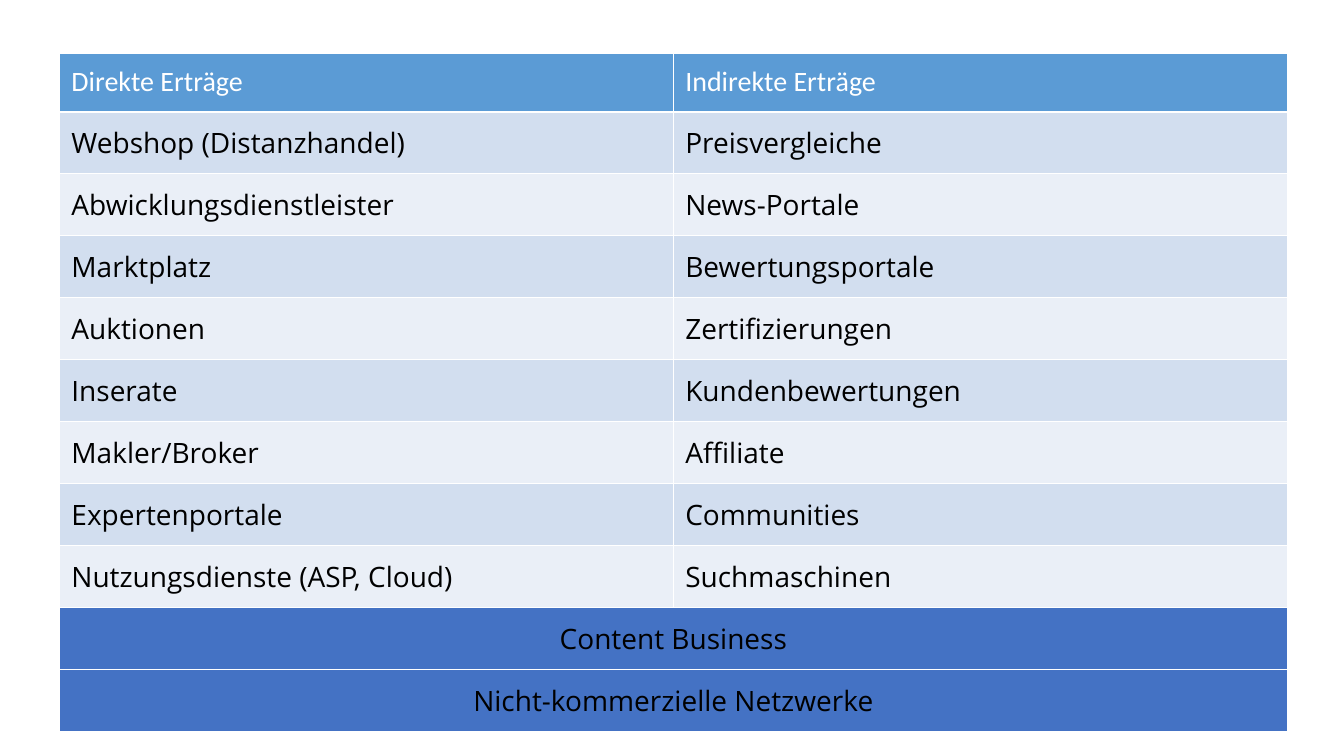
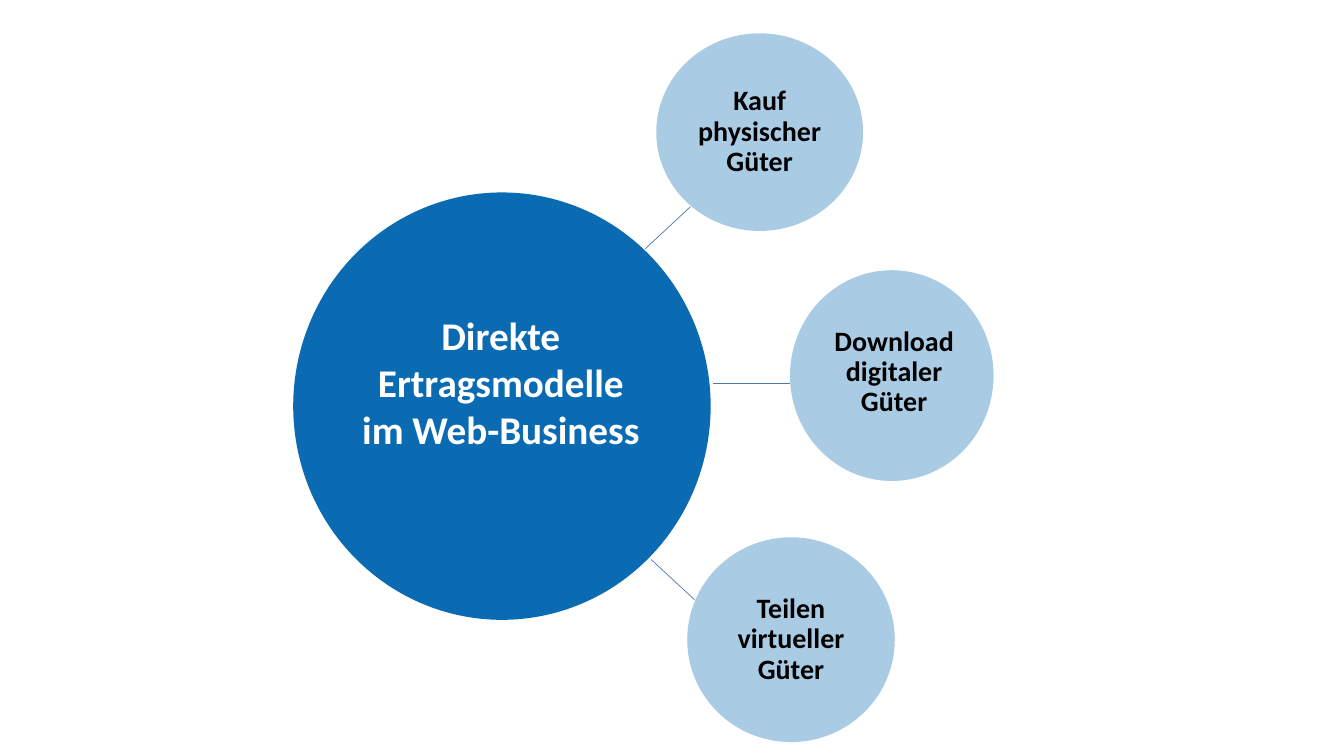
from dataclasses import dataclass

from lxml.etree import SubElement
from pptx import Presentation
from pptx.dml.color import RGBColor
from pptx.enum.shapes import MSO_CONNECTOR, MSO_SHAPE
from pptx.enum.text import MSO_ANCHOR, PP_ALIGN
from pptx.oxml.ns import qn
from pptx.shapes.autoshape import Shape
from pptx.slide import Slide
from pptx.table import _Cell
from pptx.text.text import TextFrame
from pptx.util import Cm, Pt


@dataclass(frozen=True)
class Theme:
    white: str = "FFFFFF"
    black: str = "000000"
    header: str = "5B9BD5"
    bands: tuple[str, str] = ("D2DEEF", "EAEFF7")
    summary: str = "4472C4"
    circle: str = "0A6BB2"
    spoke: str = "497CAB"
    satellite_opacity: int = 35
    heading_font: str = "Calibri"
    body_font: str = "Open Sans"
    body_size: int = 20
    hub_size: int = 28
    border_width: int = 1
    spoke_width: float = 0.5
    tight: float = 0.9


@dataclass(frozen=True)
class Style:
    font: str
    size: int
    color: str
    bold: bool = False
    align: PP_ALIGN = PP_ALIGN.LEFT
    spacing: float = 1.0


@dataclass(frozen=True)
class Box:
    left: float
    top: float
    width: float
    height: float

    def lengths(self) -> tuple[Cm, Cm, Cm, Cm]:
        return Cm(self.left), Cm(self.top), Cm(self.width), Cm(self.height)


@dataclass(frozen=True)
class Satellite:
    label: str
    box: Box
    left_inset: float = 0.03
    bottom_inset: float = 0.03


@dataclass(frozen=True)
class Spoke:
    start: tuple[float, float]
    end: tuple[float, float]


THEME = Theme()
HEADER = Style(THEME.heading_font, THEME.body_size, THEME.white, spacing=THEME.tight)
BODY = Style(THEME.body_font, THEME.body_size, THEME.black)
SUMMARY = Style(THEME.body_font, THEME.body_size, THEME.black, align=PP_ALIGN.CENTER)
HUB = Style(THEME.heading_font, THEME.hub_size, THEME.white, True, PP_ALIGN.CENTER)
LABEL = Style(THEME.heading_font, THEME.body_size, THEME.black, True,
              PP_ALIGN.CENTER, THEME.tight)

HEADINGS = ("Direkte Erträge", "Indirekte Erträge")
REVENUES = (
    ("Webshop (Distanzhandel)", "Preisvergleiche"),
    ("Abwicklungsdienstleister", "News-Portale"),
    ("Marktplatz", "Bewertungsportale"),
    ("Auktionen", "Zertifizierungen"),
    ("Inserate", "Kundenbewertungen"),
    ("Makler/Broker", "Affiliate"),
    ("Expertenportale", "Communities"),
    ("Nutzungsdienste (ASP, Cloud)", "Suchmaschinen"),
)
SHARED = ("Content Business", "Nicht-kommerzielle Netzwerke")
HEADER_HEIGHT, ROW_HEIGHT, COLUMN_WIDTH = 1.47, 1.56, 15.47
CELL_INSET = 0.3

HUB_CIRCLE = Box(7.39, 4.85, 10.52, 10.77)
HUB_TITLE = Box(8.71, 7.72, 7.82, 5.05)
SATELLITES = (
    Satellite("Kauf physischer Güter", Box(16.54, 0.84, 5.21, 4.98)),
    Satellite("Download digitaler Güter", Box(19.91, 6.81, 5.13, 5.31), 0.15, 0.2),
    Satellite("Teilen virtueller Güter", Box(17.32, 13.54, 5.23, 5.16)),
)
SPOKES = (
    Spoke((16.26, 6.27), (17.4, 5.21)),
    Spoke((17.98, 9.65), (19.91, 9.65)),
    Spoke((16.41, 14.1), (17.5, 15.11)),
)


def write(frame: TextFrame, text: str, style: Style) -> None:
    frame.word_wrap = True
    para = frame.paragraphs[0]
    para.alignment = style.align
    para.line_spacing = style.spacing
    span = para.add_run()
    span.text = text
    span.font.name = style.font
    span.font.size = Pt(style.size)
    span.font.bold = style.bold
    span.font.color.rgb = RGBColor.from_string(style.color)


def add_borders(cell: _Cell) -> None:
    properties = cell._tc.get_or_add_tcPr()
    for position, side in enumerate(("lnL", "lnR", "lnT", "lnB")):
        line = SubElement(properties, qn(f"a:{side}"),
                          w=str(Pt(THEME.border_width)))
        fill = SubElement(line, qn("a:solidFill"))
        SubElement(fill, qn("a:srgbClr"), val=THEME.white)
        properties.insert(position, line)


def fill_cell(cell: _Cell, text: str, fill: str, style: Style) -> None:
    cell.fill.solid()
    cell.fill.fore_color.rgb = RGBColor.from_string(fill)
    cell.vertical_anchor = MSO_ANCHOR.MIDDLE
    cell.margin_left = cell.margin_right = Cm(CELL_INSET)
    cell.margin_top = cell.margin_bottom = Cm(CELL_INSET)
    add_borders(cell)
    if text:
        write(cell.text_frame, text, style)


def add_revenue_table(page: Slide) -> None:
    rows = [(HEADINGS, THEME.header, HEADER)]
    rows += [(pair, THEME.bands[index % 2], BODY) for index, pair in enumerate(REVENUES)]
    rows += [((name, ""), THEME.summary, SUMMARY) for name in SHARED]
    height = HEADER_HEIGHT + ROW_HEIGHT * (len(rows) - 1)
    box = Box(1.5, 1.35, COLUMN_WIDTH * len(HEADINGS), height)
    table = page.shapes.add_table(len(rows), len(HEADINGS), *box.lengths()).table
    table.first_row = table.horz_banding = False
    for index, (texts, fill, style) in enumerate(rows):
        table.rows[index].height = Cm(ROW_HEIGHT if index else HEADER_HEIGHT)
        for column, text in enumerate(texts):
            fill_cell(table.cell(index, column), text, fill, style)
        if style is SUMMARY:
            table.cell(index, 0).merge(table.cell(index, 1))


def add_circle(page: Slide, box: Box, opacity: int = 100) -> Shape:
    circle = page.shapes.add_shape(MSO_SHAPE.OVAL, *box.lengths())
    circle.shadow.inherit = False
    circle.fill.solid()
    circle.fill.fore_color.rgb = RGBColor.from_string(THEME.circle)
    circle.line.fill.background()
    if opacity < 100:
        color = circle._element.spPr.find(f"{qn('a:solidFill')}/{qn('a:srgbClr')}")
        SubElement(color, qn("a:alpha"), val=str(opacity * 1000))
    return circle


def add_satellite(page: Slide, satellite: Satellite) -> None:
    circle = add_circle(page, satellite.box, THEME.satellite_opacity)
    frame = circle.text_frame
    frame.vertical_anchor = MSO_ANCHOR.MIDDLE
    frame.margin_top = frame.margin_right = Cm(0.03)
    frame.margin_left = Cm(satellite.left_inset)
    frame.margin_bottom = Cm(satellite.bottom_inset)
    write(frame, satellite.label, LABEL)


def add_spoke(page: Slide, spoke: Spoke) -> None:
    points = [Cm(value) for value in spoke.start + spoke.end]
    line = page.shapes.add_connector(MSO_CONNECTOR.STRAIGHT, *points)
    line.line.color.rgb = RGBColor.from_string(THEME.spoke)
    line.line.width = Pt(THEME.spoke_width)
    SubElement(line._element.spPr, qn("a:effectLst"))


def add_revenue_models(page: Slide) -> None:
    for spoke in SPOKES:
        add_spoke(page, spoke)
    add_circle(page, HUB_CIRCLE)
    for satellite in SATELLITES:
        add_satellite(page, satellite)
    title = page.shapes.add_textbox(*HUB_TITLE.lengths())
    write(title.text_frame, "Direkte Ertragsmodelle im Web-Business", HUB)


def main() -> None:
    deck = Presentation()
    deck.slide_width, deck.slide_height = Cm(33.87), Cm(19.05)
    for draw in (add_revenue_table, add_revenue_models):
        draw(deck.slides.add_slide(deck.slide_layouts[6]))
    deck.save("out.pptx")


if __name__ == "__main__":
    main()
